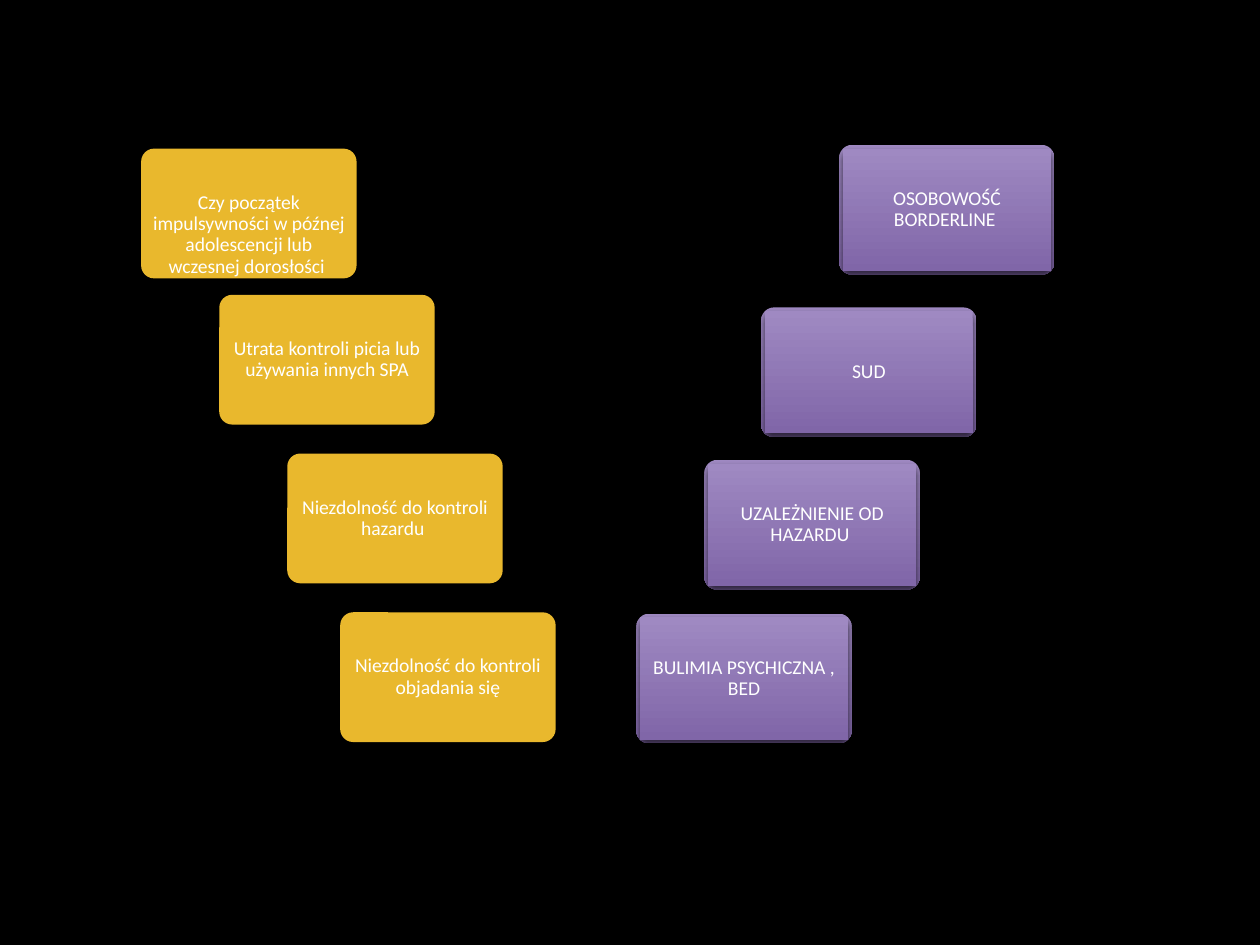
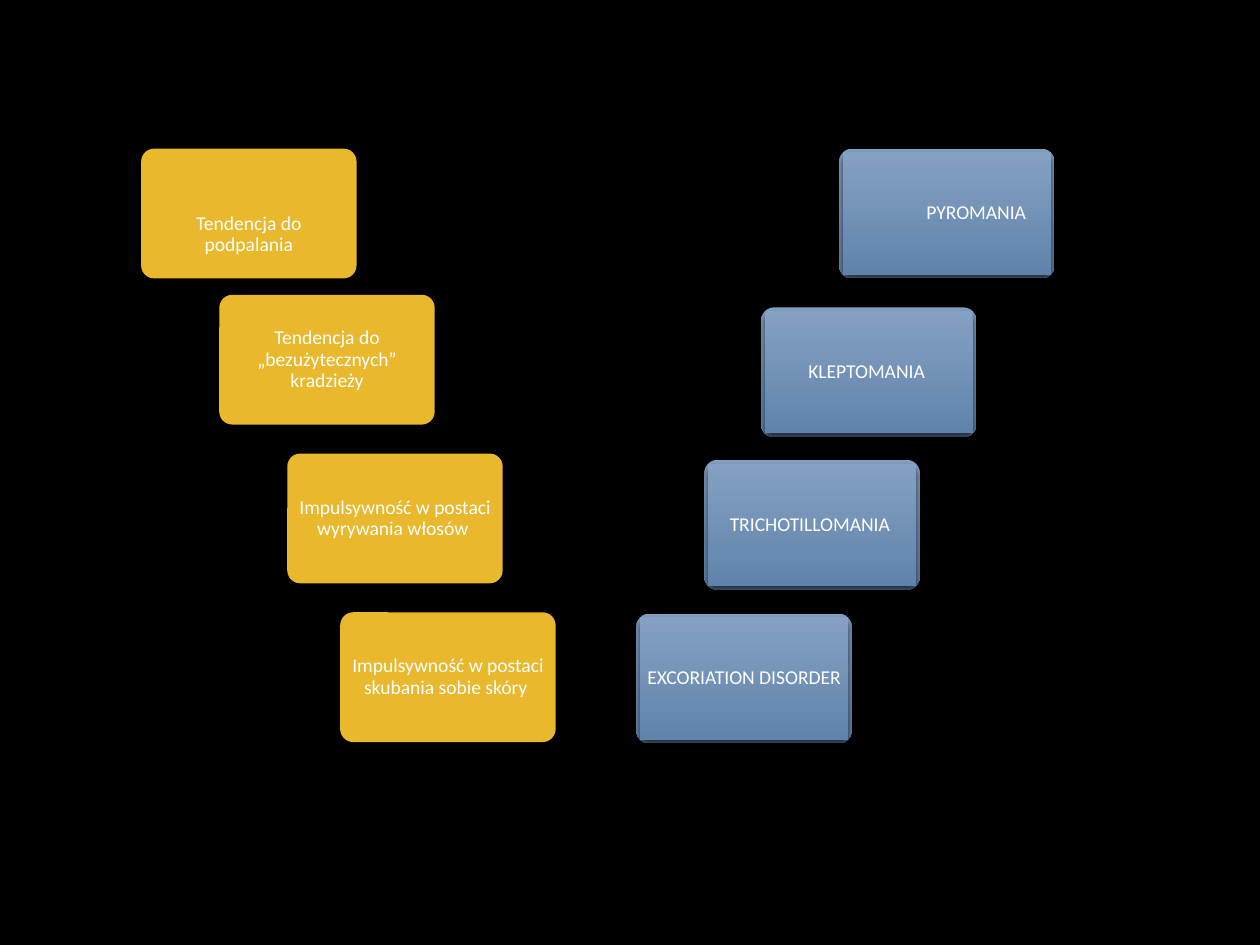
from lxml.etree import SubElement
from pptx import Presentation
from pptx.dml.color import RGBColor as RGB
from pptx.enum.shapes import MSO_SHAPE as SHAPE
from pptx.enum.text import MSO_ANCHOR as ANCHOR, PP_ALIGN as ALIGN
from pptx.oxml.ns import qn
from pptx.util import Inches, Pt

COLORS = {"back": "000000", "text": "FFFFFF", "trait": "E9B82D",
          "violet_top": "9F89C2", "violet_end": "8066A8",
          "blue_top": "84A1C3", "blue_end": "6183AB", "shadow": "000000"}
FONT, SIZE = "Calibri", 11.2
COLS, ROWS = 100, 75
CARD_W, CARD_H, INSET = 17.1, 10.3, 0.3
FIRST_TEXT_DROP = 2
TRAIT_CELLS = [(11.2, 11.8), (17.4, 23.4), (22.8, 36), (27, 48.6)]
DISORDER_CELLS = [(66.6, 11.5), (60.4, 24.4), (55.9, 36.5), (50.5, 48.7)]

SLIDES = [
    {"traits": ["Czy początek impulsywności w późnej adolescencji lub wczesnej dorosłości ",
                "Utrata kontroli picia lub używania innych SPA",
                "Niezdolność do kontroli hazardu ",
                "Niezdolność do kontroli objadania się"],
     "disorders": ["OSOBOWOŚĆ BORDERLINE ", "SUD", "UZALEŻNIENIE OD HAZARDU ",
                   "BULIMIA PSYCHICZNA , BED"],
     "tone": "violet", "first_row": 11.5, "first_level": 0},
    {"traits": ["Tendencja do podpalania",
                "Tendencja do „bezużytecznych” kradzieży",
                "Impulsywność w postaci wyrywania włosów ",
                "Impulsywność w postaci skubania sobie skóry "],
     "disorders": ["PYROMANIA ", "KLEPTOMANIA ", "TRICHOTILLOMANIA ",
                   "EXCORIATION DISORDER "],
     "tone": "blue", "first_row": 11.8, "first_level": 1},
]

prs = Presentation()
prs.slide_width, prs.slide_height = Inches(10), Inches(7.5)


def to_emu(box):
    """Turn a box in grid columns and rows into slide lengths."""
    x, y, w, h = box
    col, row = prs.slide_width / COLS, prs.slide_height / ROWS
    return round(x * col), round(y * row), round(w * col), round(h * row)


def inner(box, drop=0):
    """Return the text area of a card, moved down by drop rows."""
    x, y, w, h = box
    return x + INSET, y + (drop or INSET), w - 2 * INSET, h - 2 * INSET


def add_plate(group, kind, box):
    """Add an outline-free shape without a theme shadow."""
    sp = group.shapes.add_shape(kind, *to_emu(box))
    if kind == SHAPE.ROUNDED_RECTANGLE:
        sp.adjustments[0] = 0.1
    sp.line.fill.background()
    sp.shadow.inherit = False
    return sp


def style_raised(sp, tone):
    """Give a shape a vertical gradient and a soft shadow below it."""
    sp.fill.gradient()
    sp.fill.gradient_angle = 270
    for stop, end in zip(sp.fill.gradient_stops, ("top", "end")):
        stop.color.rgb = RGB.from_string(COLORS[f"{tone}_{end}"])
    effects = sp._element.spPr.find(qn("a:effectLst"))
    shadow = SubElement(effects, qn("a:outerShdw"), blurRad=str(Pt(5)), dist=str(Pt(3)),
                        dir="5400000", rotWithShape="0")
    color = SubElement(shadow, qn("a:srgbClr"), val=COLORS["shadow"])
    SubElement(color, qn("a:alpha"), val="65000")


def write(sp, text, level=0):
    """Write one centred paragraph in the card style."""
    tf = sp.text_frame
    tf.word_wrap = True
    tf.vertical_anchor = ANCHOR.MIDDLE
    tf.margin_left = tf.margin_right = tf.margin_top = tf.margin_bottom = Inches(0.05)
    p = tf.paragraphs[0]
    p.alignment, p.line_spacing, p.level = ALIGN.CENTER, 0.9, level
    if level:
        pPr = p._p.get_or_add_pPr()
        pPr.set("marL", str(Inches(0.5) * level))
        pPr.set("indent", "0")
    r = p.add_run()
    r.text = text
    r.font.name, r.font.size = FONT, Pt(SIZE)
    r.font.color.rgb = RGB.from_string(COLORS["text"])


def add_trait(slide, box, text, drop=0):
    """Add a flat yellow card with its text."""
    group = slide.shapes.add_group_shape()
    sp = add_plate(group, SHAPE.ROUNDED_RECTANGLE, box)
    sp.fill.solid()
    sp.fill.fore_color.rgb = RGB.from_string(COLORS["trait"])
    write(group.shapes.add_textbox(*to_emu(inner(box, drop))), text)


def add_disorder(slide, box, text, tone, level=0):
    """Add a raised gradient card with its text on an inner plate."""
    group = slide.shapes.add_group_shape()
    style_raised(add_plate(group, SHAPE.ROUNDED_RECTANGLE, box), tone)
    sp = add_plate(group, SHAPE.RECTANGLE, inner(box))
    style_raised(sp, tone)
    write(sp, text, level)


def add_stairs_slide(traits, disorders, tone, first_row, first_level):
    """Add a slide with traits stepping right and disorders stepping left."""
    slide = prs.slides.add_slide(prs.slide_layouts[6])
    back = slide.background.fill
    back.solid()
    back.fore_color.rgb = RGB.from_string(COLORS["back"])
    for i, (cell, text) in enumerate(zip(TRAIT_CELLS, traits)):
        add_trait(slide, (*cell, CARD_W, CARD_H), text, 0 if i else FIRST_TEXT_DROP)
    for i, ((x, y), text) in enumerate(zip(DISORDER_CELLS, disorders)):
        box = x, y if i else first_row, CARD_W, CARD_H
        add_disorder(slide, box, text, tone, 0 if i else first_level)


def main():
    """Build both slides and save them."""
    for content in SLIDES:
        add_stairs_slide(**content)
    prs.save("out.pptx")


if __name__ == "__main__":
    main()
